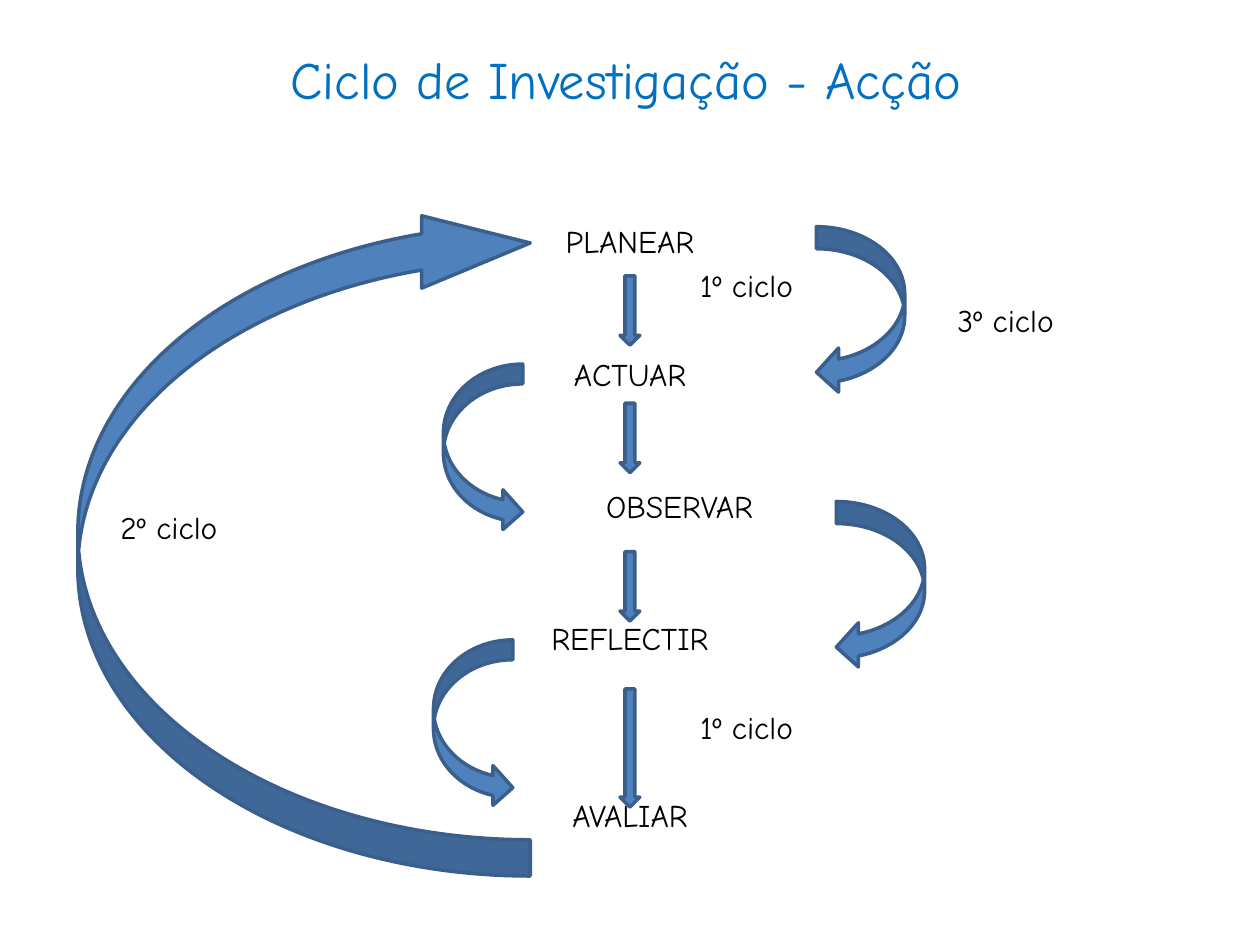
from dataclasses import dataclass

from pptx import Presentation
from pptx.dml.color import RGBColor
from pptx.enum.shapes import MSO_SHAPE
from pptx.enum.text import MSO_ANCHOR, PP_ALIGN
from pptx.util import Cm, Pt


@dataclass(frozen=True)
class Theme:
    font: str = "Comic Neue"
    title_color: str = "0070C0"
    text_color: str = "000000"
    arrow_fill: str = "4F81BD"
    arrow_line: str = "3A5F8C"
    title_size: int = 30
    text_size: int = 18
    line_width: int = 2


def write_text(frame, text, *, font, size, color, align=PP_ALIGN.LEFT):
    frame.word_wrap = True
    frame.vertical_anchor = MSO_ANCHOR.MIDDLE
    para = frame.paragraphs[0]
    para.alignment = align
    span = para.add_run()
    span.text = text
    span.font.name = font
    span.font.size = Pt(size)
    span.font.color.rgb = RGBColor.from_string(color)


class CyclePage:
    def __init__(self, page, theme):
        self.page = page
        self.theme = theme

    def title(self, text, left, top, width, height):
        box = self.page.shapes.title
        box.left, box.top, box.width, box.height = map(Cm, (left, top, width, height))
        write_text(box.text_frame, text, font=self.theme.font,
                   size=self.theme.title_size, color=self.theme.title_color,
                   align=PP_ALIGN.CENTER)

    def label(self, text, left, top, width, height=1.02, align=PP_ALIGN.LEFT):
        box = self.page.shapes.add_textbox(*map(Cm, (left, top, width, height)))
        write_text(box.text_frame, text, font=self.theme.font,
                   size=self.theme.text_size, color=self.theme.text_color,
                   align=align)

    def arrow(self, kind, left, top, width, height, flip=None, adjustments=()):
        shape = self.page.shapes.add_shape(kind, *map(Cm, (left, top, width, height)))
        shape.shadow.inherit = False
        shape.fill.solid()
        shape.fill.fore_color.rgb = RGBColor.from_string(self.theme.arrow_fill)
        shape.line.color.rgb = RGBColor.from_string(self.theme.arrow_line)
        shape.line.width = Pt(self.theme.line_width)
        for index, value in enumerate(adjustments):
            shape.adjustments[index] = value
        if flip:
            shape.element.spPr.xfrm.set(flip, "1")


def main():
    deck = Presentation()
    deck.slide_width, deck.slide_height = Cm(25.4), Cm(19.05)
    cycle = CyclePage(deck.slides.add_slide(deck.slide_layouts[5]), Theme())
    cycle.title("Ciclo de Investigação - Acção", 1.19, 0.58, 22.86, 2.01)

    middle, first_top, line_step, label_width = 12.7, 4.35, 0.89, 5
    column_labels = [
        ("PLANEAR", 0, middle),
        ("1º ciclo", 1, 15.05),
        ("ACTUAR", 3, middle),
        ("OBSERVAR", 6, 13.7),
        ("REFLECTIR", 9, middle),
        ("1º ciclo", 11, 15.05),
        ("AVALIAR", 13, middle),
    ]
    for text, line, center in column_labels:
        cycle.label(text, center - label_width / 2, first_top + line * line_step,
                    label_width, align=PP_ALIGN.CENTER)

    cycle.arrow(MSO_SHAPE.CURVED_RIGHT_ARROW, 1.57, 4.17, 9.12, 13.49,
                flip="flipV", adjustments=(0.08, 0.16, 0.24))

    down_width = 0.4
    for top, height in [(5.56, 1.4), (8.13, 1.4), (11.12, 1.4), (13.89, 2.38)]:
        cycle.arrow(MSO_SHAPE.DOWN_ARROW, middle - down_width / 2, top,
                    down_width, height)

    curved_arrows = [
        (16.46, 4.57, 1.78, None),
        (16.86, 10.11, 1.78, None),
        (8.74, 12.9, 1.6, "flipH"),
        (8.94, 7.34, 1.6, "flipH"),
    ]
    for left, top, width, flip in curved_arrows:
        cycle.arrow(MSO_SHAPE.CURVED_LEFT_ARROW, left, top, width, 3.38, flip=flip)

    cycle.label("2º ciclo", 2.18, 10.11, 3.58)
    cycle.label("3º ciclo", 19.05, 5.94, 3.96)
    deck.save("out.pptx")


if __name__ == "__main__":
    main()
